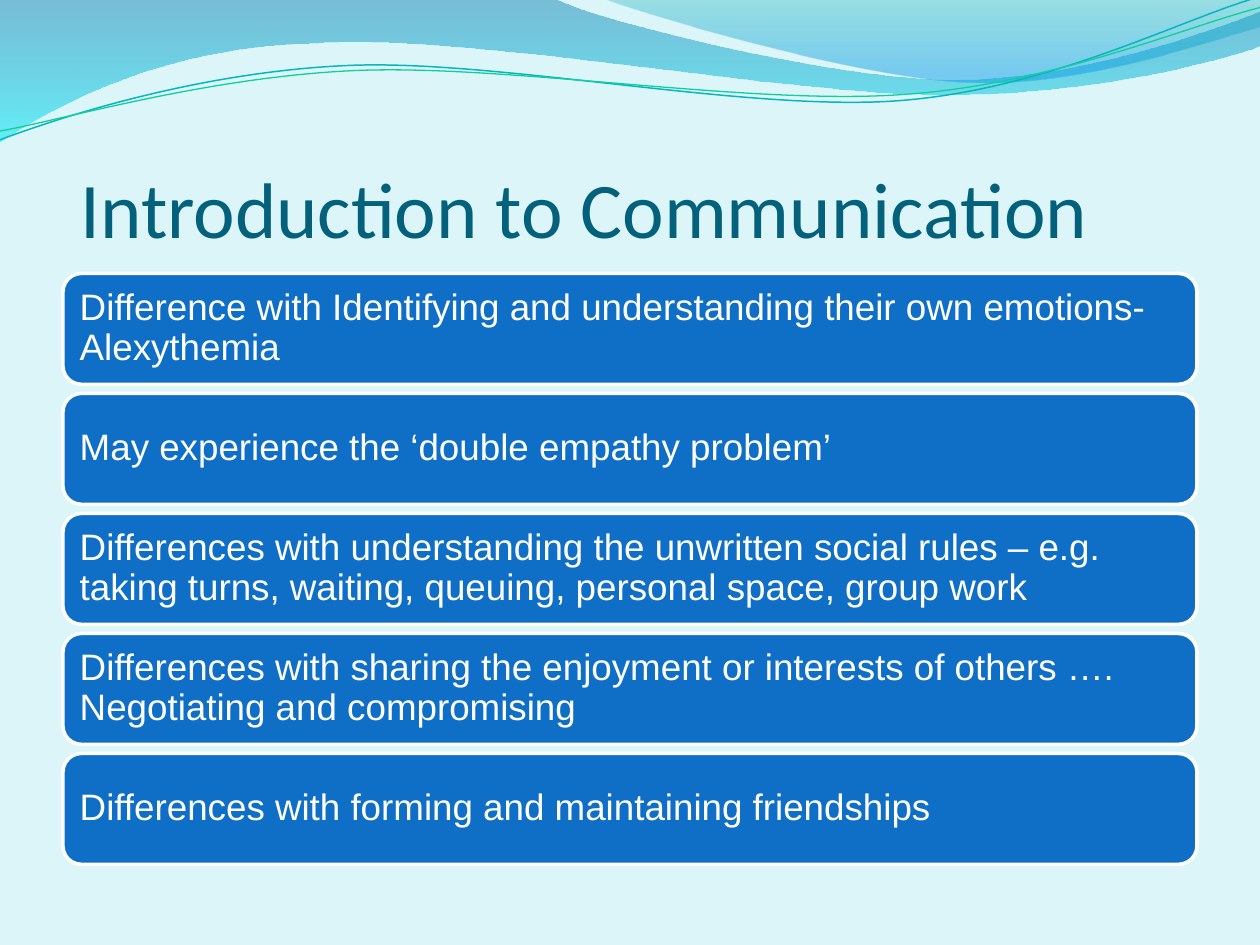
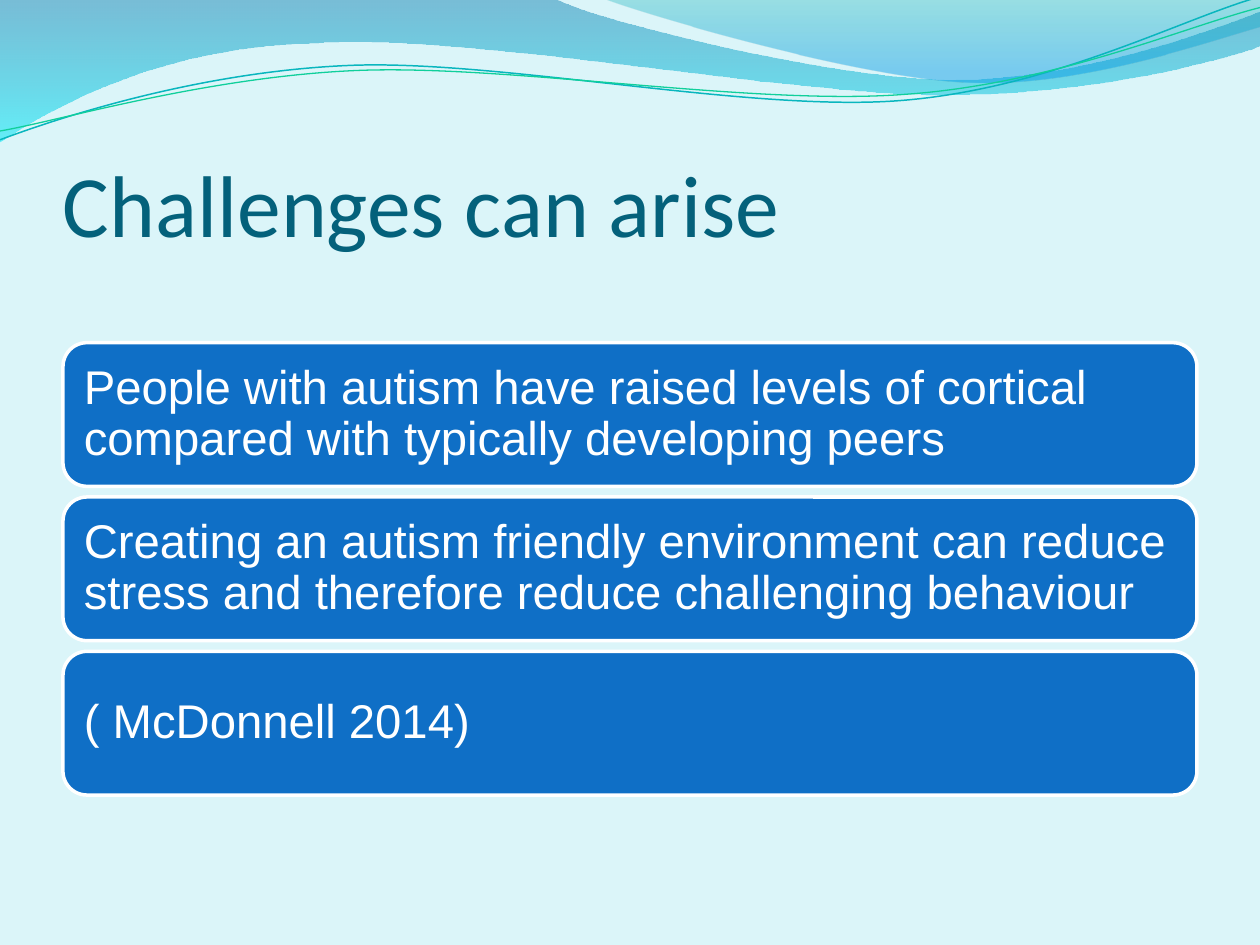
import dataclasses

import lxml.etree
import pptx
import pptx.dml.color
import pptx.enum.shapes
import pptx.enum.text
import pptx.oxml.ns
import pptx.util

Inches = pptx.util.Inches
Pt = pptx.util.Pt
Color = pptx.dml.color.RGBColor.from_string
qualified = pptx.oxml.ns.qn


@dataclasses.dataclass(frozen=True)
class Theme:
    background: str = "DBF5F9"
    title_color: str = "04617B"
    box_fill: str = "0F6FC6"
    box_text: str = "FFFFFF"
    title_font: str = "Calibri"
    body_font: str = "Arial"
    box_border: float = 2


THEME = Theme()

# Each piece is one point (a straight line) or three points (a cubic curve).
# Gradient stops are (position %, colour, opacity %).
WAVES = [
    dict(start=(0, 0), stops=[(0, "0079AD", 45), (100, "00E9F7", 55)], pieces=[
        [(4.4, -0.01)],
        [(4.76, 0.17), (6.64, 0.63), (7.58, 0.63)],
        [(8.53, 0.63), (9.58, 0.26), (10, 0.09)],
        [(10.01, 0.36)],
        [(9.83, 0.44), (8.7, 0.76), (7.46, 0.75)],
        [(6.22, 0.75), (3.82, 0.28), (2.57, 0.34)],
        [(1.29, 0.36), (0.46, 0.83), (-0.01, 1.13)],
        [(0, 0)]]),
    dict(start=(4.79, -0.01),
         stops=[(0, "00ABB4", 30), (80, "0099E4", 45), (100, "0099E4", 45)], pieces=[
        [(5.09, 0.11), (6.82, 0.62), (7.69, 0.65)],
        [(8.56, 0.69), (9.61, 0.32), (10, 0.21)],
        [(10, 0)],
        [(4.79, -0.01)]]),
    dict(start=(0, 1.11), line=("09B6BE", 0.85), pieces=[
        [(0.48, 0.93), (1.58, 0.57), (2.77, 0.52)],
        [(3.95, 0.47), (5.93, 0.89), (7.13, 0.8)],
        [(8.33, 0.71), (9.38, 0.15), (9.98, -0.02)]]),
    dict(start=(0, 1.04), line=("10CF9B", 0.75), pieces=[
        [(0.47, 0.96), (1.64, 0.61), (2.83, 0.56)],
        [(4.03, 0.51), (5.97, 0.84), (7.17, 0.75)],
        [(8.36, 0.67), (9.41, 0.21), (10, 0.06)]]),
]

PAGES = [
    dict(title="Introduction to Communication", title_size=45, title_indent=0.14,
         first_top=2.17, last_top=5.98, box_height=0.88, inset=0.09, text_size=21,
         messages=[
             "Difference with Identifying and understanding their own emotions- Alexythemia",
             "May experience the ‘double empathy problem’",
             "Differences with understanding the unwritten social rules – e.g. "
             "taking turns, waiting, queuing, personal space, group work",
             "Differences with sharing the enjoyment or interests of others …. "
             "Negotiating and compromising",
             "Differences with forming and maintaining friendships"]),
    dict(title="Challenges can arise", title_size=50, title_indent=0,
         first_top=2.72, last_top=5.17, box_height=1.14, inset=0.11, text_size=27,
         messages=[
             "People with autism have raised levels of cortical "
             "compared with typically developing peers",
             "Creating an autism friendly environment can reduce "
             "stress and therefore reduce challenging behaviour",
             "( McDonnell 2014)"]),
]


def add_curved_outline(page, start, pieces, closed):
    """Build a freeform through every point, then join each three-point piece into a curve."""
    builder = page.shapes.build_freeform(*map(Inches, start))
    builder.add_line_segments(
        [tuple(map(Inches, point)) for piece in pieces for point in piece], close=closed)
    shape = builder.convert_to_shape()
    segments = iter(list(shape.element.iter(qualified("a:lnTo"))))
    for piece in pieces:
        lines = [next(segments) for _ in piece]
        if len(lines) == 3:
            curve = lxml.etree.Element(qualified("a:cubicBezTo"))
            lines[0].addprevious(curve)
            for line in lines:
                curve.append(line[0])
                line.getparent().remove(line)
    return shape


def write_text(shape, text, size, font_name, color, anchor, insets):
    frame = shape.text_frame
    frame.word_wrap = True
    frame.vertical_anchor = anchor
    (frame.margin_left, frame.margin_top,
     frame.margin_right, frame.margin_bottom) = map(Inches, insets)
    para = frame.paragraphs[0]
    para.text = text
    para.alignment = pptx.enum.text.PP_ALIGN.LEFT
    para.font.size = Pt(size)
    para.font.name = font_name
    para.font.color.rgb = Color(color)
    return para


deck = pptx.Presentation()
deck.slide_width, deck.slide_height = Inches(10), Inches(7.5)
background = deck.slide_master.background.fill
background.solid()
background.fore_color.rgb = Color(THEME.background)

for content in PAGES:
    page = deck.slides.add_slide(deck.slide_layouts[6])

    for wave in WAVES:
        filled = "stops" in wave
        shape = add_curved_outline(page, wave["start"], wave["pieces"], filled)
        shape.shadow.inherit = False
        if filled:
            shape.line.fill.background()
            shape.fill.gradient()
            shape.fill.gradient_angle = 270
            stop_list = next(shape.element.iter(qualified("a:gsLst")))
            for stop in list(stop_list):
                stop_list.remove(stop)
            for position, color, opacity in wave["stops"]:
                stop = lxml.etree.SubElement(
                    stop_list, qualified("a:gs"), pos=str(position * 1000))
                tint = lxml.etree.SubElement(stop, qualified("a:srgbClr"), val=color)
                lxml.etree.SubElement(tint, qualified("a:alpha"), val=str(opacity * 1000))
        else:
            color, width = wave["line"]
            shape.fill.background()
            shape.line.color.rgb = Color(color)
            shape.line.width = Pt(width)

    title = page.shapes.add_textbox(Inches(0.5), Inches(0.77), Inches(9), Inches(1.25))
    write_text(title, content["title"], content["title_size"], THEME.title_font,
               THEME.title_color, pptx.enum.text.MSO_ANCHOR.BOTTOM,
               (content["title_indent"], 0.05, 0, 0))

    messages = content["messages"]
    pitch = (content["last_top"] - content["first_top"]) / (len(messages) - 1)
    for index, message in enumerate(messages):
        box = page.shapes.add_shape(
            pptx.enum.shapes.MSO_SHAPE.ROUNDED_RECTANGLE,
            Inches(0.5), Inches(content["first_top"] + index * pitch),
            Inches(9), Inches(content["box_height"]))
        box.shadow.inherit = False
        box.fill.solid()
        box.fill.fore_color.rgb = Color(THEME.box_fill)
        box.line.color.rgb = Color(THEME.box_text)
        box.line.width = Pt(THEME.box_border)
        para = write_text(box, message, content["text_size"], THEME.body_font,
                          THEME.box_text, pptx.enum.text.MSO_ANCHOR.MIDDLE,
                          [content["inset"]] * 4)
        para.line_spacing = 0.9

deck.save("out.pptx")
